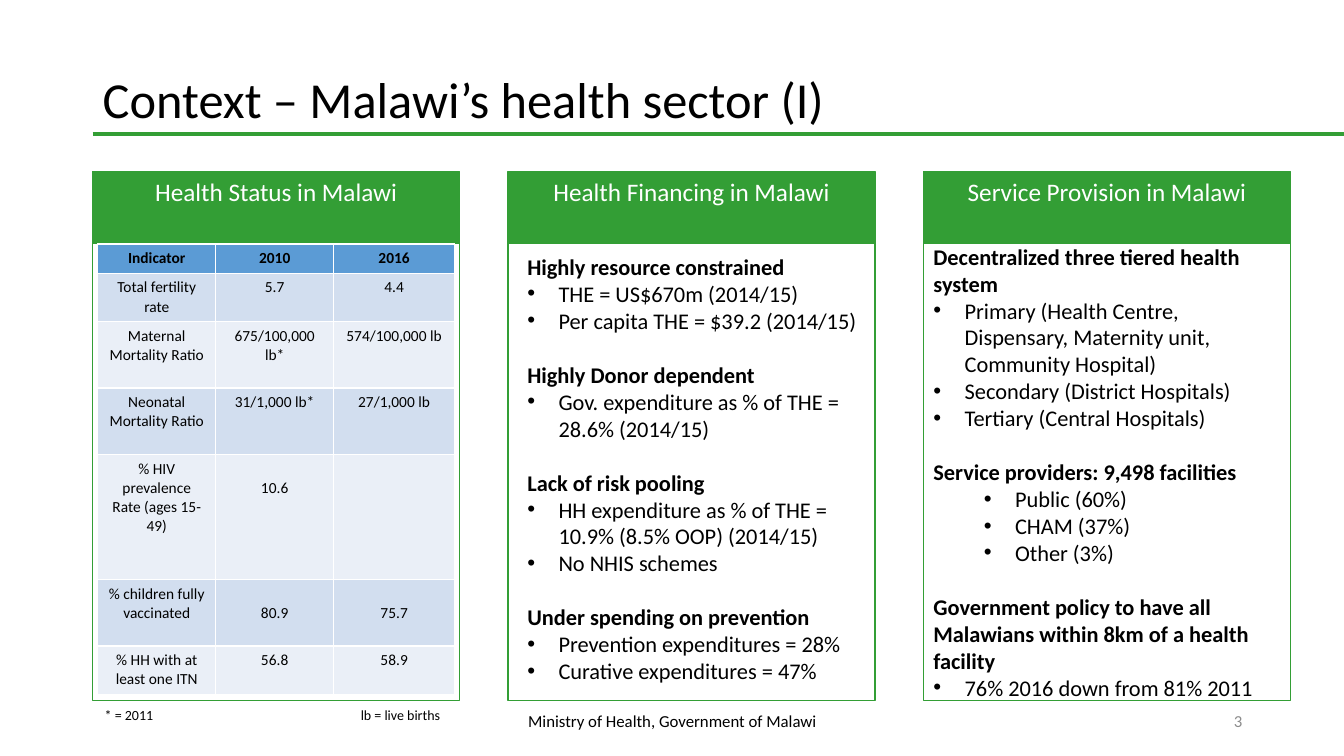
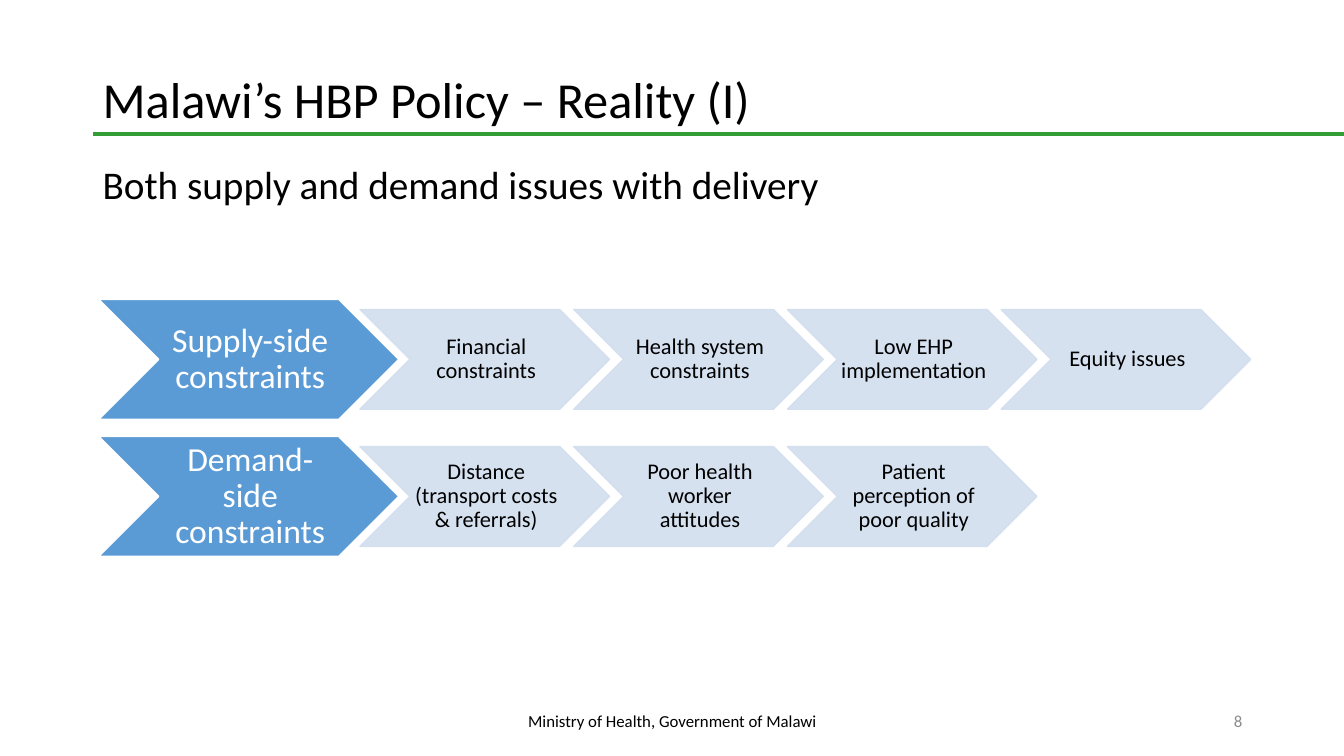
from lxml.etree import SubElement
from pptx import Presentation
from pptx.dml.color import RGBColor
from pptx.enum.shapes import MSO_CONNECTOR as Connector, MSO_SHAPE as Shape
from pptx.enum.text import MSO_ANCHOR as Anchor, PP_ALIGN as Align
from pptx.oxml.ns import qn
from pptx.util import Inches, Pt

WIDTH, HEIGHT = 13.33, 7.5
FONT = "Calibri"
GREEN, BLUE, PALE, PALER = "339E35", "5B9BD5", "D2DEEF", "EAEFF7"
BLACK, WHITE, GREY = "000000", "FFFFFF", "8C8C8C"

LEFT, RULE_TOP = 0.92, 1.33
COLUMN_WIDTH, COLUMN_PITCH = 3.64, 4.12
HEADER_TOP, HEADER_HEIGHT = 1.7, 0.71
PANEL_TOP, PANEL_HEIGHT = 2.4, 4.55
FOOTER_TOP, FOOTER_HEIGHT = 6.95, 0.4
INSETS = (0.1, 0.05, 0.1, 0.05)

CHAIN_LEFT, CHAIN_TOP, CHAIN_PITCH = 0.98, 2.97, 1.36
LEAD_HEIGHT, STEP_HEIGHT, CHEVRON_RATIO = 1.19, 0.99, 2.5
STEP_LEFT, STEP_PITCH = 3.57, 2.12

INDICATORS = [
    ("Indicator", "2010", "2016"),
    ("Total fertility rate", "5.7", "4.4"),
    ("Maternal Mortality Ratio", "675/100,000 lb*", "574/100,000 lb"),
    ("Neonatal Mortality Ratio", "31/1,000 lb*", "27/1,000 lb"),
    ("% HIV prevalence\nRate (ages 15-49)", "10.6", ""),
    ("% children fully vaccinated", "80.9", "75.7"),
    ("% HH with at least one ITN", "56.8", "58.9"),
]
INDICATOR_WIDTHS = (1.17, 1.17, 1.2)
INDICATOR_HEIGHTS = (0.29, 0.48, 0.66, 0.66, 1.24, 0.66, 0.48)
LOWERED_ROWS = (4, 5)

FINANCING = [
    ("Highly resource constrained",
     ["THE = US$670m (2014/15)", "Per capita THE = $39.2 (2014/15)"], 0.31),
    ("Highly Donor dependent",
     ["Gov. expenditure as % of THE = 28.6% (2014/15)"], 0.31),
    ("Lack of risk pooling",
     ["HH expenditure as % of THE = 10.9% (8.5% OOP) (2014/15)",
      "No NHIS schemes"], 0.31),
    ("Under spending on prevention",
     ["Prevention expenditures = 28%", "Curative expenditures = 47%"], 0.31),
]
PROVISION = [
    ("Decentralized three tiered health system",
     ["Primary (Health Centre, Dispensary, Maternity unit, Community Hospital)",
      "Secondary (District Hospitals)", "Tertiary (Central Hospitals)"], 0.31),
    ("Service providers: 9,498 facilities",
     ["Public (60%)", "CHAM (37%)", "Other (3%)"], 0.81),
    ("Government policy to have all Malawians within 8km of a health facility",
     ["76% 2016 down from 81% 2011"], 0.31),
]
CONSTRAINTS = [
    ("Supply-side constraints",
     ["Financial constraints", "Health system constraints",
      "Low EHP implementation", "Equity issues"]),
    ("Demand-side constraints",
     ["Distance (transport costs & referrals)", "Poor health worker attitudes",
      "Patient perception of poor quality"]),
]


def rgb(code):
    """Turn a hex string into a colour."""
    return RGBColor.from_string(code)


def inches(*lengths):
    """Turn plain numbers into lengths."""
    return [Inches(length) for length in lengths]


def style(paragraph, size, color=BLACK, bold=False, align=Align.LEFT, spacing=None):
    """Set the font, alignment and line spacing of a paragraph."""
    paragraph.alignment = align
    if spacing:
        paragraph.line_spacing = spacing
    font = paragraph.font
    font.name, font.size, font.bold = FONT, Pt(size), bold
    font.color.rgb = rgb(color)


def prepare(frame, anchor=Anchor.TOP, insets=INSETS):
    """Make a text frame wrap, with its anchor and insets."""
    frame.word_wrap, frame.vertical_anchor = True, anchor
    (frame.margin_left, frame.margin_top,
     frame.margin_right, frame.margin_bottom) = inches(*insets)


def add_label(slide, box, text, size, anchor=Anchor.TOP, **look):
    """Add a one-paragraph text box and return its paragraph."""
    frame = slide.shapes.add_textbox(*inches(*box)).text_frame
    prepare(frame, anchor)
    paragraph = frame.paragraphs[0]
    paragraph.text = text
    style(paragraph, size, **look)
    return paragraph


def add_block(slide, kind, box, fill, line):
    """Add a flat preset shape."""
    block = slide.shapes.add_shape(kind, *inches(*box))
    block.shadow.inherit = False
    if fill:
        block.fill.solid()
        block.fill.fore_color.rgb = rgb(fill)
    else:
        block.fill.background()
    block.line.color.rgb = rgb(line)
    block.line.width = Pt(1)
    return block


def add_page(deck, title, number):
    """Add a slide with the shared title, rule and footer."""
    slide = deck.slides.add_slide(deck.slide_layouts[6])
    rule = slide.shapes.add_connector(
        Connector.STRAIGHT, *inches(LEFT, RULE_TOP, WIDTH, RULE_TOP))
    rule.line.color.rgb = rgb(GREEN)
    rule.line.width = Pt(2.25)
    SubElement(rule._element.spPr, qn("a:effectLst"))
    add_label(slide, (LEFT, 0.2, 11.21, RULE_TOP - 0.2), title, 36,
              Anchor.BOTTOM, spacing=0.9)
    add_label(slide, (4.42, FOOTER_TOP, 4.5, FOOTER_HEIGHT),
              "Ministry of Health, Government of Malawi", 12,
              Anchor.MIDDLE, align=Align.CENTER)
    add_label(slide, (9.42, FOOTER_TOP, 3, FOOTER_HEIGHT), number, 12,
              Anchor.MIDDLE, color=GREY, align=Align.RIGHT)
    return slide


def add_column(slide, index, heading):
    """Add a headed column and return its outlined panel."""
    left = LEFT + index * COLUMN_PITCH
    header = add_block(slide, Shape.RECTANGLE,
                       (left, HEADER_TOP, COLUMN_WIDTH, HEADER_HEIGHT), GREEN, GREEN)
    prepare(header.text_frame)
    header.text_frame.text = heading
    style(header.text_frame.paragraphs[0], 18, WHITE, align=Align.CENTER)
    return add_block(slide, Shape.RECTANGLE,
                     (left, PANEL_TOP, COLUMN_WIDTH, PANEL_HEIGHT), None, GREEN)


def add_bullet(paragraph, indent):
    """Give a paragraph a hanging bullet."""
    properties = paragraph._p.get_or_add_pPr()
    properties.set("marL", str(Inches(indent)))
    properties.set("indent", str(-Inches(0.31)))
    SubElement(properties, qn("a:buFont"), typeface="Arial")
    SubElement(properties, qn("a:buChar"), char="•")


def fill_panel(panel, topics, insets):
    """Write bold topics, each with its bulleted points, into a panel."""
    frame = panel.text_frame
    prepare(frame, insets=insets)
    for index, (topic, points, indent) in enumerate(topics):
        heading = frame.add_paragraph() if index else frame.paragraphs[0]
        heading.text = topic
        if index:
            heading.space_before = Pt(19.5)
        style(heading, 16, bold=True)
        for point in points:
            item = frame.add_paragraph()
            item.text = point
            add_bullet(item, indent)
            style(item, 16)


def add_indicators(slide):
    """Add the table of health indicators."""
    box = (LEFT + 0.05, PANEL_TOP + 0.02, sum(INDICATOR_WIDTHS), sum(INDICATOR_HEIGHTS))
    table = slide.shapes.add_table(
        len(INDICATORS), len(INDICATOR_WIDTHS), *inches(*box)).table
    for column, width in zip(table.columns, INDICATOR_WIDTHS):
        column.width = Inches(width)
    for row, values in enumerate(INDICATORS):
        table.rows[row].height = Inches(INDICATOR_HEIGHTS[row])
        for column, value in enumerate(values):
            cell = table.cell(row, column)
            cell.text = value
            cell.fill.solid()
            cell.fill.fore_color.rgb = rgb((PALE if row % 2 else PALER) if row else BLUE)
            if column and row in LOWERED_ROWS:
                cell.margin_top = Inches(0.24)
            for paragraph in cell.text_frame.paragraphs:
                style(paragraph, 11, bold=row == 0, align=Align.CENTER)


def add_footnote(slide):
    """Add the table's key, its two halves set apart by a tab stop."""
    note = add_label(slide, (0.94, 6.96, 3.57, 0.27), "* = 2011\tlb = live births", 10)
    properties = note._p.get_or_add_pPr()
    stops = properties.makeelement(qn("a:tabLst"), {})
    SubElement(stops, qn("a:tab"), pos=str(Inches(2.54)), algn="l")
    properties.find(qn("a:defRPr")).addprevious(stops)


def add_chevron(slide, left, middle, height, text, size, fill, line, color):
    """Add a labelled chevron centred on a row's middle."""
    box = (left, middle - height / 2, height * CHEVRON_RATIO, height)
    chevron = add_block(slide, Shape.CHEVRON, box, fill, line)
    prepare(chevron.text_frame, Anchor.MIDDLE, (0.03, 0.02, 0, 0.02))
    chevron.text_frame.text = text
    style(chevron.text_frame.paragraphs[0], size, color,
          align=Align.CENTER, spacing=0.9)
    return chevron


def add_chain(slide, row, lead, steps):
    """Add a row of chevrons: a lead and its translucent steps."""
    middle = CHAIN_TOP + LEAD_HEIGHT / 2 + row * CHAIN_PITCH
    add_chevron(slide, CHAIN_LEFT, middle, LEAD_HEIGHT, lead, 24, BLUE, WHITE, WHITE)
    for index, step in enumerate(steps):
        chevron = add_chevron(slide, STEP_LEFT + index * STEP_PITCH, middle,
                              STEP_HEIGHT, step, 16, PALE, PALE, BLACK)
        for tint in chevron._element.spPr.iter(qn("a:srgbClr")):
            SubElement(tint, qn("a:alpha"), val="90000")


def build_context(deck):
    """Build the slide on the health sector."""
    slide = add_page(deck, "Context – Malawi’s health sector (I)", "3")
    add_column(slide, 0, "Health Status in Malawi")
    add_indicators(slide)
    add_footnote(slide)
    financing = add_column(slide, 1, "Health Financing in Malawi")
    fill_panel(financing, FINANCING, (0.19, 0.11, 0.07, 0))
    provision = add_column(slide, 2, "Service Provision in Malawi")
    fill_panel(provision, PROVISION, (0.1, 0.01, 0.1, 0))


def build_reality(deck):
    """Build the slide on delivery constraints."""
    slide = add_page(deck, "Malawi’s HBP Policy – Reality (I)", "8")
    add_label(slide, (LEFT, 1.59, 11.5, 0.6),
              "Both supply and demand issues with delivery", 28, spacing=0.9)
    for row, (lead, steps) in enumerate(CONSTRAINTS):
        add_chain(slide, row, lead, steps)


def main():
    """Build and save the deck."""
    deck = Presentation()
    deck.slide_width, deck.slide_height = inches(WIDTH, HEIGHT)
    build_context(deck)
    build_reality(deck)
    deck.save("out.pptx")


if __name__ == "__main__":
    main()
